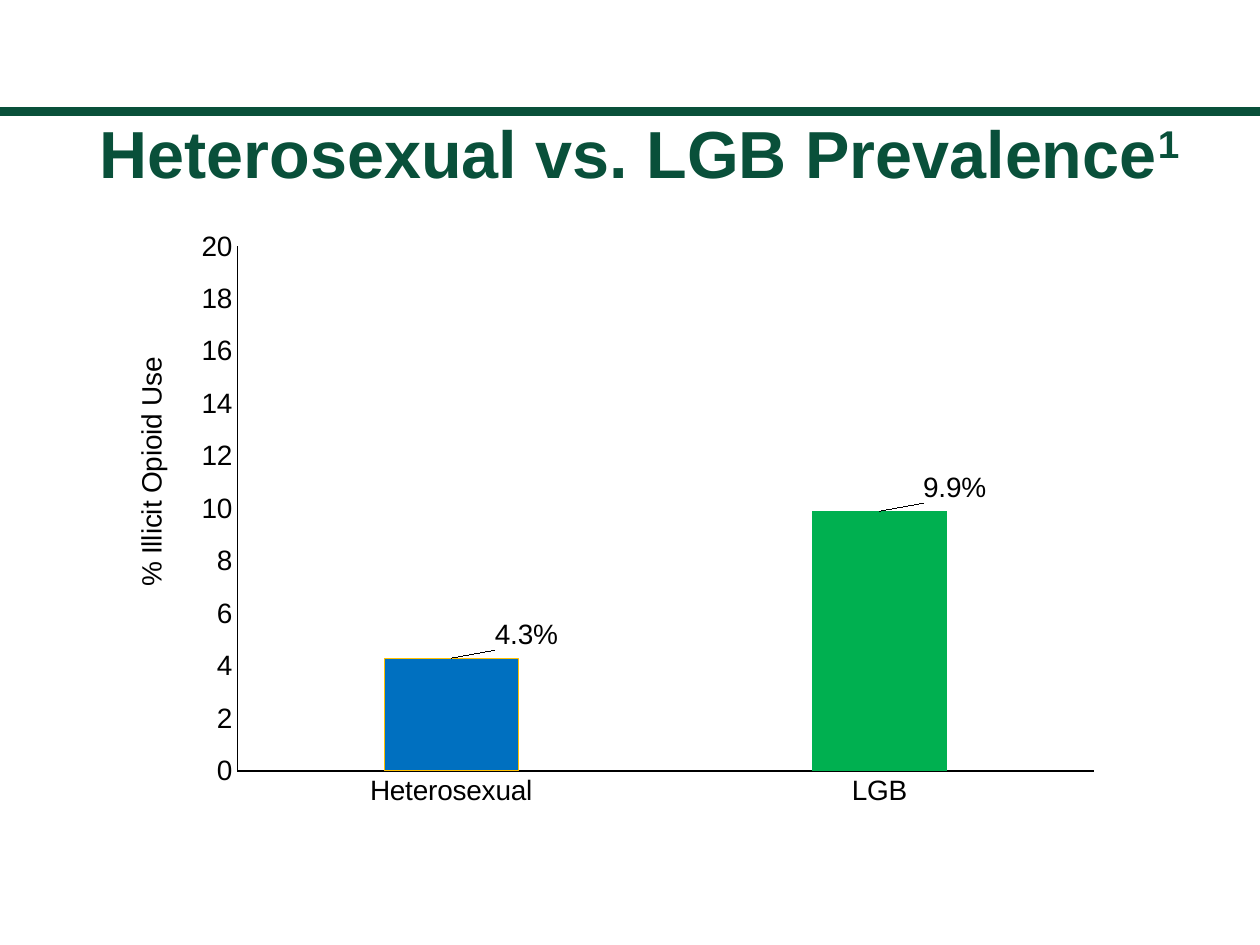
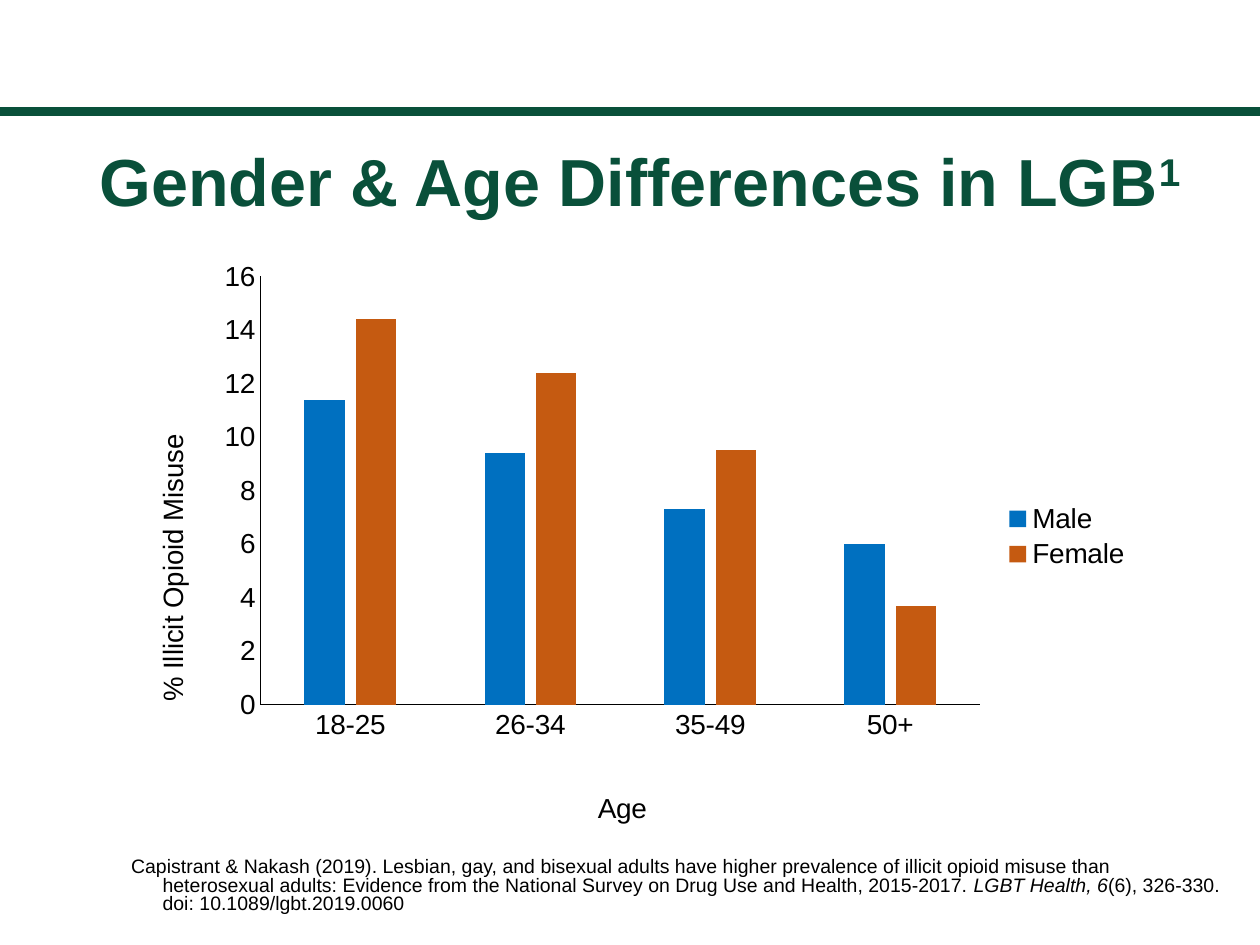
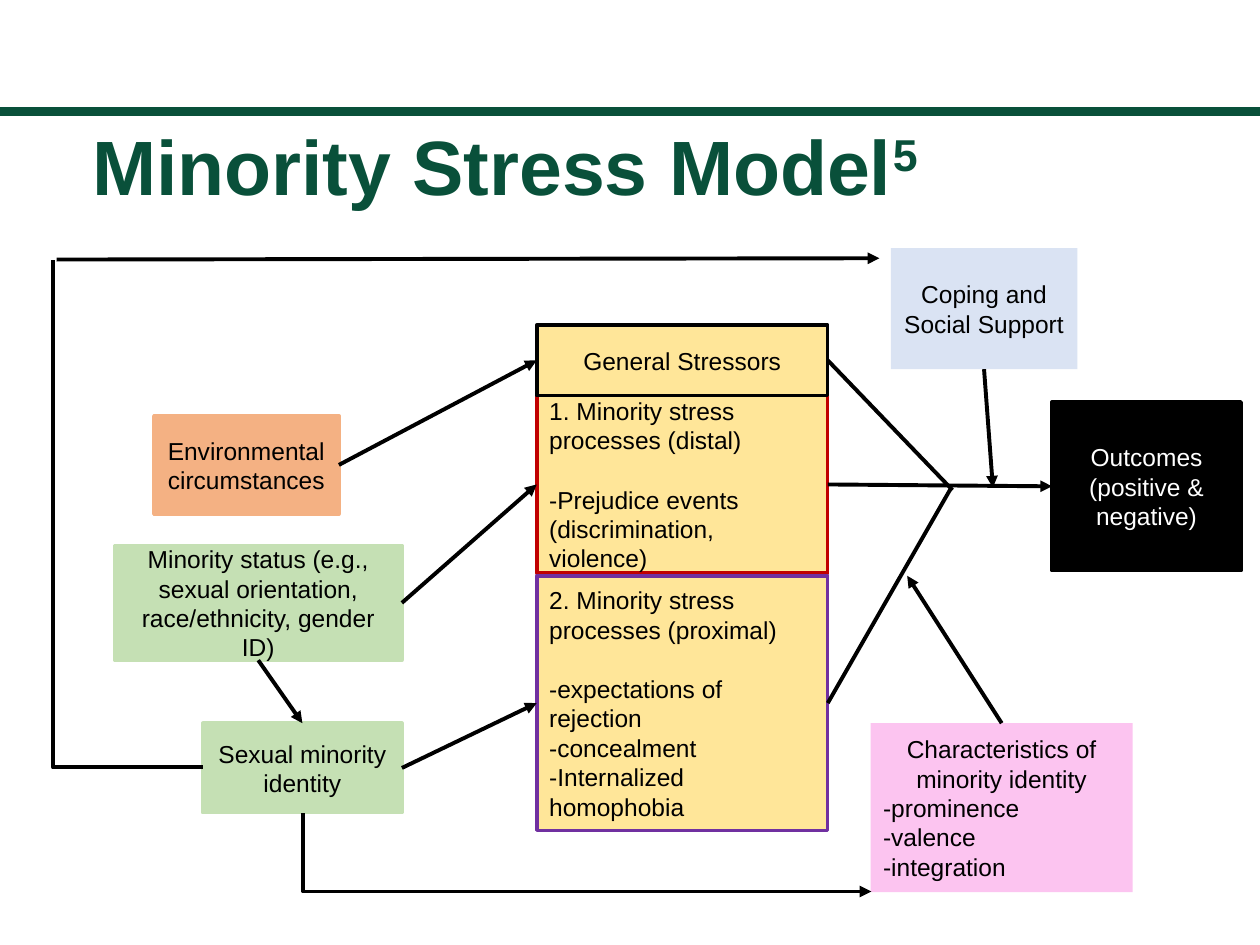
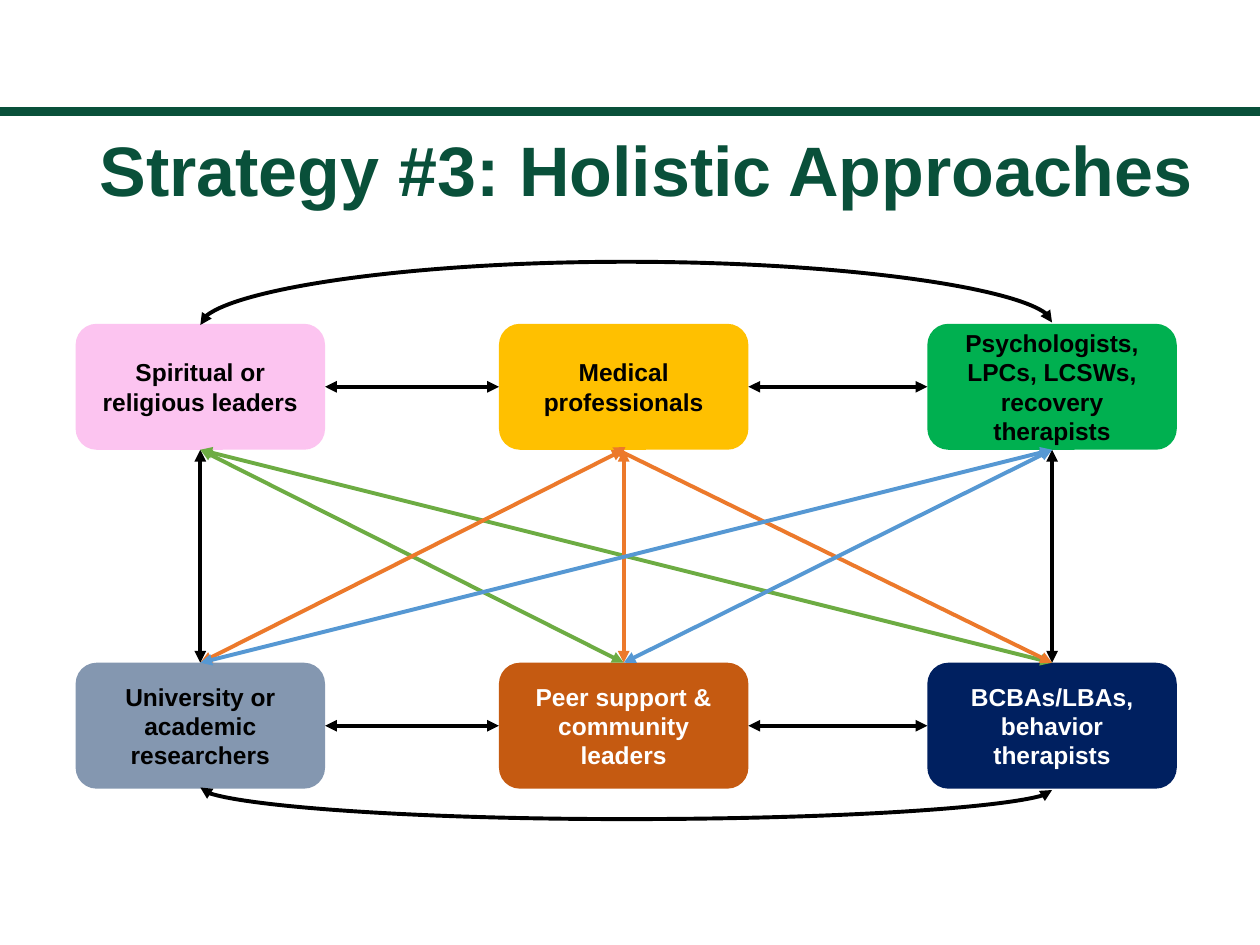
import pptx
import pptx.chart.data
import pptx.dml.color
import pptx.enum.chart
import pptx.enum.shapes
import pptx.enum.text
import pptx.oxml.ns
import pptx.oxml.xmlchemy
import pptx.util
from pptx.util import Inches

RGB = pptx.dml.color.RGBColor
GREEN_BRAND = RGB(0x09, 0x50, 0x3A)
BLACK = RGB(0x00, 0x00, 0x00)
WHITE = RGB(0xFF, 0xFF, 0xFF)
BLUE = RGB(0x00, 0x70, 0xC0)
GREEN = RGB(0x00, 0xB0, 0x50)
GOLD = RGB(0xFF, 0xC0, 0x00)
RUST = RGB(0xC5, 0x5A, 0x11)
PINK = RGB(0xFC, 0xC4, 0xF0)
NAVY = RGB(0x00, 0x20, 0x60)
SLATE = RGB(0x84, 0x97, 0xB0)
PEACH = RGB(0xF4, 0xB1, 0x83)
SAGE = RGB(0xC5, 0xE0, 0xB4)
SAND = RGB(0xFF, 0xE6, 0x99)
PALE_BLUE = RGB(0xDA, 0xE3, 0xF3)
RED = RGB(0xC0, 0x00, 0x00)
PURPLE = RGB(0x70, 0x30, 0xA0)
LINK_GREEN = RGB(0x6D, 0xAC, 0x43)
LINK_ORANGE = RGB(0xEC, 0x79, 0x2B)
LINK_BLUE = RGB(0x56, 0x98, 0xD3)

FONT = "Arial"
CHART_SIZE = 16
TITLE_ONLY, TITLE_AND_CONTENT = 5, 1
TOP, LEFT, BOTTOM, RIGHT = range(4)

ALIGN = pptx.enum.text.PP_ALIGN
ANCHOR = pptx.enum.text.MSO_ANCHOR
SHAPE = pptx.enum.shapes.MSO_SHAPE
CONNECTOR = pptx.enum.shapes.MSO_CONNECTOR
qn = pptx.oxml.ns.qn
new_element = pptx.oxml.xmlchemy.OxmlElement


# ---- Text ----
def set_font(font, size, color, bold=False):
    font.name, font.size, font.bold = FONT, pptx.util.Pt(size), bold
    font.color.rgb = color


def write(frame, *paragraphs, size=14, color=BLACK, bold=False, align=None,
          rest_align=None, line_spacing=None, gap_after_first=None):
    """Each paragraph is a string or a list of (text, style) runs."""
    for index, content in enumerate(paragraphs):
        paragraph = frame.add_paragraph() if index else frame.paragraphs[0]
        paragraph.alignment = rest_align if index else align
        if line_spacing:
            paragraph.line_spacing = line_spacing
        if gap_after_first and index == 0:
            paragraph.space_after = pptx.util.Pt(gap_after_first)
        runs = [(content, None)] if isinstance(content, str) else content
        for text, style in runs:
            run = paragraph.add_run()
            run.text = text
            set_font(run.font, size, color, bold)
            if style == "italic":
                run.font.italic = True
            if style == "super":
                run._r.get_or_add_rPr().set("baseline", "30000")


def prepare_placeholder(placeholder, left, top, width, height, anchor, bottom_inset=0.02):
    placeholder.left, placeholder.top = Inches(left), Inches(top)
    placeholder.width, placeholder.height = Inches(width), Inches(height)
    frame = placeholder.text_frame
    frame.auto_size = pptx.enum.text.MSO_AUTO_SIZE.NONE
    frame.word_wrap = True
    frame.vertical_anchor = anchor
    frame.margin_left = frame.margin_right = Inches(0.04)
    frame.margin_top, frame.margin_bottom = Inches(0.02), Inches(bottom_inset)
    return frame


def add_slide(prs, title, top, height, left=0.75, size=38, note=None, layout=TITLE_ONLY):
    slide = prs.slides.add_slide(prs.slide_layouts[layout])
    frame = prepare_placeholder(slide.shapes.title, left, top, 9, height, ANCHOR.TOP)
    runs = [(title, None)] + ([(note, "super")] if note else [])
    write(frame, runs, size=size, color=GREEN_BRAND, bold=True,
          align=ALIGN.LEFT, line_spacing=0.9)
    return slide


def add_citation(slide, runs):
    frame = prepare_placeholder(slide.placeholders[1], 0.75, 2.74, 9, 4.76,
                                ANCHOR.BOTTOM, bottom_inset=0.24)
    properties = frame.paragraphs[0]._p.get_or_add_pPr()
    properties.set("marL", str(Inches(0.5)))
    properties.set("indent", str(Inches(-0.25)))
    properties.append(new_element("a:buNone"))
    frame.paragraphs[0].space_before = pptx.util.Pt(0)
    write(frame, runs, size=11.1, line_spacing=0.8)


# ---- Shapes and connectors ----
def add_box(slide, left, top, width, height, *paragraphs, fill, line=None,
            kind=SHAPE.RECTANGLE, **text_format):
    box = slide.shapes.add_shape(kind, Inches(left), Inches(top),
                                 Inches(width), Inches(height))
    box.shadow.inherit = False
    box.fill.solid()
    box.fill.fore_color.rgb = fill
    if line is None:
        box.line.fill.background()
    else:
        box.line.color.rgb = line
        box.line.width = pptx.util.Pt(2)
    box.text_frame.word_wrap = True
    box.text_frame.vertical_anchor = ANCHOR.MIDDLE
    write(box.text_frame, *paragraphs, **text_format)
    return box


def add_band(prs, slide):
    """Put the green band on the master, behind everything."""
    band = add_box(slide, -0.02, 0.85, 10.02, 0.07, fill=GREEN_BRAND)
    prs.slide_master.shapes.element.insert(2, band.element)


def add_link(slide, start, end, color=BLACK, head=False, tail=True,
             kind=CONNECTOR.STRAIGHT):
    """Ends are (box, side) to be joined, or (x, y) in inches."""
    link = slide.shapes.add_connector(kind, 0, 0, 0, 0)
    if hasattr(start[0], "text_frame"):
        link.begin_connect(*start)
    else:
        link.begin_x, link.begin_y = map(Inches, start)
    if hasattr(end[0], "text_frame"):
        link.end_connect(*end)
    else:
        link.end_x, link.end_y = map(Inches, end)
    link.line.color.rgb = color
    link.line.width = pptx.util.Pt(2.25)
    outline = link.element.find(".//" + qn("a:ln"))
    for shown, tag in ((head, "a:headEnd"), (tail, "a:tailEnd")):
        if shown:
            arrowhead = new_element(tag)
            arrowhead.set("type", "triangle")
            outline.append(arrowhead)
    link.element.spPr.append(new_element("a:effectLst"))
    return link


def route(link, preset, frame, rotation, flip_h=False, flip_v=False, bulge=None):
    """Give a bent or curved connector its preset path in a turned frame."""
    link.left, link.top, link.width, link.height = map(Inches, frame)
    transform = link.element.find(".//" + qn("a:xfrm"))
    transform.set("rot", str(rotation * 60000))
    transform.set("flipH", str(int(flip_h)))
    transform.set("flipV", str(int(flip_v)))
    geometry = link.element.find(".//" + qn("a:prstGeom"))
    geometry.set("prst", preset)
    if bulge is not None:
        guide = new_element("a:gd")
        guide.set("name", "adj1")
        guide.set("fmla", f"val {int(bulge / frame[2] * 100000)}")
        geometry.find(qn("a:avLst")).append(guide)


# ---- Charts ----
def place(parent, index, x, y, width=None, height=None):
    """Set a manual layout, in fractions of the chart."""
    layout = parent.find(qn("c:layout"))
    if layout is None:
        layout = new_element("c:layout")
        parent.insert(index, layout)
    manual = new_element("c:manualLayout")
    layout.append(manual)
    settings = []
    if width:
        settings.append(("layoutTarget", "inner"))
    if parent.tag != qn("c:dLbl"):
        settings += [("xMode", "edge"), ("yMode", "edge")]
    settings += [("x", x), ("y", y)]
    if width:
        settings += [("w", width), ("h", height)]
    for name, value in settings:
        setting = new_element("c:" + name)
        setting.set("val", str(value))
        manual.append(setting)


def style_axis(axis):
    axis.has_major_gridlines = False
    axis.major_tick_mark = axis.minor_tick_mark = pptx.enum.chart.XL_TICK_MARK.NONE
    axis.format.line.color.rgb = BLACK
    axis.format.line.width = pptx.util.Pt(0.75)
    set_font(axis.tick_labels.font, CHART_SIZE, BLACK)


def title_axis(axis, text, x, y, rotated=False):
    write(axis.axis_title.text_frame, text, size=CHART_SIZE)
    element = axis.axis_title.element
    if rotated:
        body = element.find(".//" + qn("a:bodyPr"))
        body.set("rot", "-5400000")
        body.set("vert", "horz")
    place(element, 1, x, y)


def add_columns(slide, frame, categories, series, maximum, plot_layout):
    """series is a list of (name, values, colour)."""
    data = pptx.chart.data.CategoryChartData()
    data.categories = categories
    for name, values, _ in series:
        data.add_series(name, values)
    chart = slide.shapes.add_chart(pptx.enum.chart.XL_CHART_TYPE.COLUMN_CLUSTERED,
                                   *map(Inches, frame), data).chart
    chart.has_title = False
    chart.has_legend = len(series) > 1
    set_font(chart.font, CHART_SIZE, BLACK)
    if chart.has_legend:
        chart.legend.position = pptx.enum.chart.XL_LEGEND_POSITION.RIGHT
        chart.legend.include_in_layout = False
        set_font(chart.legend.font, CHART_SIZE, BLACK)
    plot = chart.plots[0]
    plot.vary_by_categories = False
    plot.gap_width, plot.overlap = 219, -27
    for columns, (_, _, color) in zip(plot.series, series):
        columns.format.fill.solid()
        columns.format.fill.fore_color.rgb = color
    style_axis(chart.category_axis)
    style_axis(chart.value_axis)
    chart.value_axis.minimum_scale = 0
    chart.value_axis.maximum_scale = maximum
    chart.value_axis.major_unit = 2
    place(chart.element.find(".//" + qn("c:plotArea")), 0, *plot_layout)
    return chart


# ---- Slides ----
def build_prevalence(prs):
    slide = add_slide(prs, "Heterosexual vs. LGB Prevalence", 0.94, 0.58, note="1")
    add_band(prs, slide)
    chart = add_columns(slide, (0.89, 1.74, 7.94, 4.75), ["Heterosexual", "LGB"],
                        [("Series 1", (4.3, 9.9), LINK_BLUE)], 20,
                        (0.125, 0.045, 0.856, 0.877))
    title_axis(chart.value_axis, "% Illicit Opioid Use", 0.016, 0.222, rotated=True)
    prevalence = chart.plots[0].series[0]
    for index, (label, color) in enumerate((("4.3%", BLUE), ("9.9%", GREEN))):
        column = prevalence.points[index]
        column.format.fill.solid()
        column.format.fill.fore_color.rgb = color
        write(column.data_label.text_frame, label, size=CHART_SIZE)
        column.data_label.position = pptx.enum.chart.XL_LABEL_POSITION.OUTSIDE_END
    prevalence.points[0].format.line.color.rgb = GOLD
    prevalence.points[0].format.line.width = pptx.util.Pt(0.5)
    for label in chart.element.findall(".//" + qn("c:dLbl")):
        place(label, 1, 0.075, -0.005)


def build_age_differences(prs):
    slide = add_slide(prs, "Gender & Age Differences in LGB", 1.16, 0.71, note="1",
                      layout=TITLE_AND_CONTENT)
    add_citation(slide, [
        ("Capistrant & Nakash (2019). Lesbian, gay, and bisexual adults have higher "
         "prevalence of illicit opioid misuse than heterosexual adults: Evidence from "
         "the National Survey on Drug Use and Health, 2015-2017. ", None),
        ("LGBT Health, 6", "italic"),
        ("(6), 326-330. doi: 10.1089/lgbt.2019.0060", None)])
    chart = add_columns(slide, (1.11, 1.99, 7.97, 4.61),
                        ["18-25", "26-34", "35-49", "50+"],
                        [("Male", (11.4, 9.4, 7.3, 6), BLUE),
                         ("Female", (14.4, 12.4, 9.5, 3.7), RUST)], 16,
                        (0.12, 0.045, 0.717, 0.749))
    title_axis(chart.value_axis, "% Illicit Opioid Misuse", 0.01, 0.319, rotated=True)
    title_axis(chart.category_axis, "Age", 0.451, 0.935)


def build_stress_model(prs):
    slide = add_slide(prs, "Minority Stress Model", 1, 1.13, left=0.69, size=44, note="5")
    center = ALIGN.CENTER

    # Boxes
    environment = add_box(slide, 1.22, 3.3, 1.47, 0.78, "Environmental circumstances",
                          fill=PEACH, line=PEACH, align=center)
    status = add_box(slide, 0.91, 4.33, 2.28, 0.91,
                     "Minority status (e.g., sexual orientation, race/ethnicity, gender ID)",
                     fill=SAGE, line=SAGE, align=center)
    characteristics = add_box(slide, 6.91, 5.74, 2.08, 1.34,
                              "Characteristics of minority identity", "-prominence",
                              "-valence", "-integration", fill=PINK, align=center,
                              rest_align=ALIGN.LEFT)
    distal = add_box(slide, 4.26, 3.14, 2.31, 1.41, "1. Minority stress processes (distal)",
                     "-Prejudice events (discrimination, violence)", fill=SAND, line=RED,
                     align=ALIGN.LEFT, rest_align=ALIGN.LEFT, gap_after_first=17)
    identity = add_box(slide, 1.61, 5.74, 1.58, 0.71, "Sexual minority identity",
                       fill=SAGE, line=SAGE, align=center)
    general = add_box(slide, 4.26, 2.58, 2.31, 0.56, "General Stressors",
                      fill=SAND, line=BLACK, align=center)
    outcomes = add_box(slide, 8.35, 3.19, 1.5, 1.34, "Outcomes (positive & negative)",
                       fill=BLACK, line=BLACK, color=WHITE, align=center)
    coping = add_box(slide, 7.07, 1.97, 1.48, 0.96, "Coping and Social Support",
                     fill=PALE_BLUE, align=center)
    proximal = add_box(slide, 4.26, 4.57, 2.31, 2.02,
                       "2. Minority stress processes (proximal)",
                       "-expectations of rejection", "-concealment",
                       "-Internalized homophobia", fill=SAND, line=PURPLE,
                       align=ALIGN.LEFT, rest_align=ALIGN.LEFT, gap_after_first=17)

    # Straight arrows
    for start, end in (
            ((environment, RIGHT), (general, LEFT)),
            ((status, RIGHT), (distal, LEFT)),
            ((status, BOTTOM), (identity, TOP)),
            ((identity, RIGHT), (proximal, LEFT)),
            ((distal, RIGHT), (outcomes, LEFT)),
            ((characteristics, TOP), (7.2, 4.57)),
            ((coping, BOTTOM), (7.88, 3.87)),
            ((0.45, 2.06), (6.98, 2.05))):
        add_link(slide, start, end)
    add_link(slide, (proximal, RIGHT), (7.55, 3.87), tail=False)
    add_link(slide, (general, RIGHT), (7.56, 3.89), tail=False)

    # Bent lines from identity to coping and to characteristics
    to_coping = add_link(slide, (identity, LEFT), (0.42, 2.06), tail=False,
                         kind=CONNECTOR.ELBOW)
    route(to_coping, "bentConnector2", (0.42, 2.06, 1.19, 4.03), 180)
    to_characteristics = add_link(slide, (identity, BOTTOM), (6.91, 7.08),
                                  kind=CONNECTOR.ELBOW)
    route(to_characteristics, "bentConnector2", (4.35, 4.51, 0.62, 4.51), 270, flip_h=True)


def build_holistic(prs):
    slide = add_slide(prs, "Strategy #3: Holistic Approaches", 1.06, 0.7, size=40)

    # Grid of professions
    columns, rows = (0.6, 3.96, 7.36), (2.57, 5.26)
    professions = (
        (("Spiritual or religious leaders", PINK, BLACK),
         ("Medical professionals", GOLD, BLACK),
         ("Psychologists, LPCs, LCSWs, recovery therapists", GREEN, BLACK)),
        (("University or academic researchers", SLATE, BLACK),
         ("Peer support & community leaders", RUST, WHITE),
         ("BCBAs/LBAs, behavior therapists", NAVY, WHITE)))
    upper, lower = [
        [add_box(slide, left, top, 1.98, 1, text, fill=fill, color=color, bold=True,
                 align=ALIGN.CENTER, kind=SHAPE.ROUNDED_RECTANGLE)
         for left, (text, fill, color) in zip(columns, row)]
        for top, row in zip(rows, professions)]
    spiritual, medical, psychologists = upper
    researchers, peers, behavior = lower

    # Two-way links along the rows and down the outer columns
    for row in (upper, lower):
        for one, other in zip(row, row[1:]):
            add_link(slide, (one, RIGHT), (other, LEFT), head=True)
    for one, other in ((psychologists, behavior), (spiritual, researchers)):
        add_link(slide, (one, BOTTOM), (other, TOP), head=True)

    # Coloured links across
    for start, other, color in (
            ((spiritual, BOTTOM), peers, LINK_GREEN),
            ((spiritual, BOTTOM), behavior, LINK_GREEN),
            ((medical, BOTTOM), researchers, LINK_ORANGE),
            ((medical, BOTTOM), peers, LINK_ORANGE),
            ((4.86, 3.55), behavior, LINK_ORANGE),
            ((psychologists, BOTTOM), researchers, LINK_BLUE),
            ((psychologists, BOTTOM), peers, LINK_BLUE)):
        add_link(slide, start, (other, TOP), color=color, head=True)

    # Arcs over and under the grid
    over = add_link(slide, (spiritual, TOP), (psychologists, TOP), head=True,
                    kind=CONNECTOR.CURVE)
    route(over, "curvedConnector3", (4.96, -0.81, 0.02, 6.76), 90,
          flip_h=True, flip_v=True, bulge=0.5)
    under = add_link(slide, (researchers, BOTTOM), (behavior, BOTTOM), head=True,
                     kind=CONNECTOR.CURVE)
    route(under, "curvedConnector3", (4.96, 2.88, 0.02, 6.76), 270,
          flip_h=True, bulge=0.25)


def main():
    prs = pptx.Presentation()
    prs.slide_width, prs.slide_height = Inches(10), Inches(7.5)
    build_prevalence(prs)
    build_age_differences(prs)
    build_stress_model(prs)
    build_holistic(prs)
    prs.save("out.pptx")


if __name__ == "__main__":
    main()
